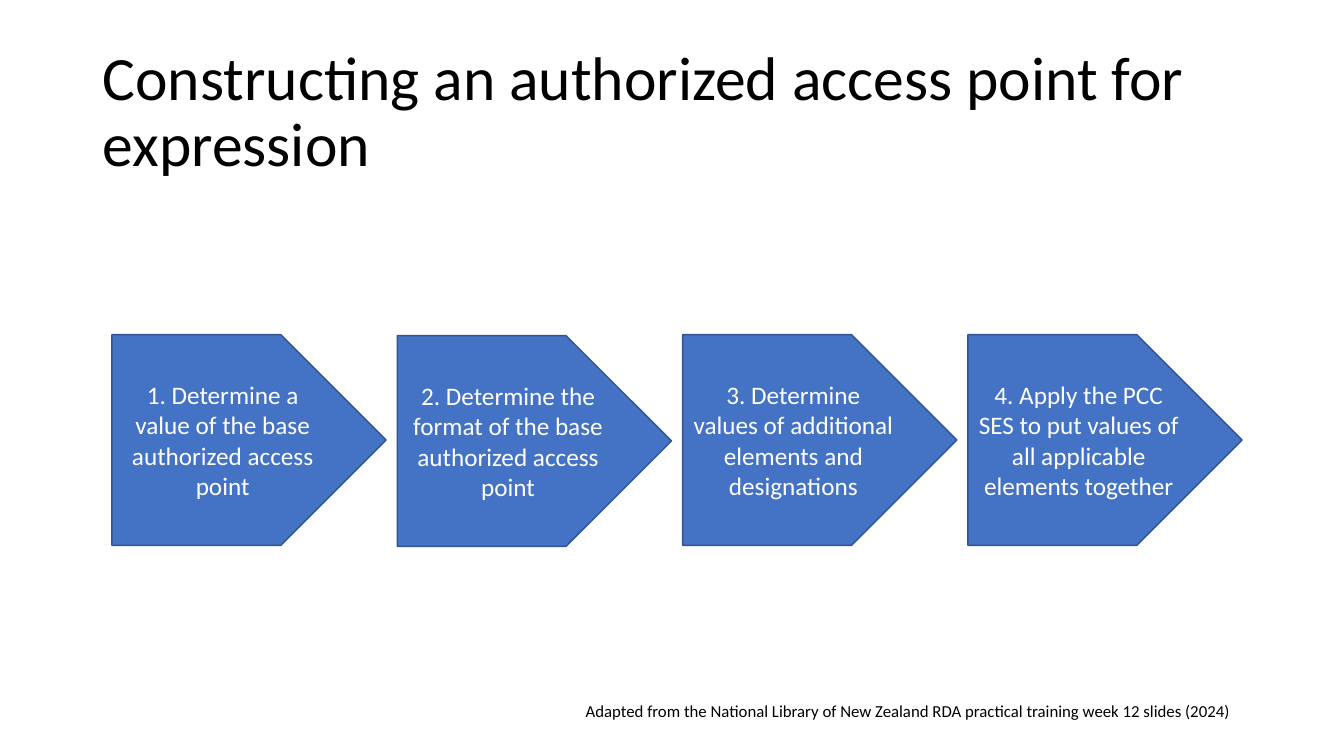
from pptx import Presentation
from pptx import util as u
from pptx.dml.color import RGBColor
from pptx.enum import shapes, text

PX = 9144  # EMU per px, 100 px to the inch

STEPS = [
    "1. Determine a value of the base authorized access point",
    "2. Determine the format of the base authorized access point",
    "3. Determine values of additional elements and designations",
    "4. Apply the PCC SES to put values of all applicable elements together",
]


def color(hex_string):
    return RGBColor.from_string(hex_string)


def write(shape, words, size, font="Calibri", fill="000000",
          align=text.PP_ALIGN.LEFT, anchor=text.MSO_ANCHOR.TOP, spacing=1.0):
    frame = shape.text_frame
    frame.word_wrap = True
    frame.vertical_anchor = anchor
    paragraph = frame.paragraphs[0]
    paragraph.alignment = align
    paragraph.line_spacing = spacing
    run = paragraph.add_run()
    run.text = words
    run.font.name = font
    run.font.size = u.Pt(size)
    run.font.color.rgb = color(fill)


class SlideBuilder:
    arrow_fill = "4472C4"
    arrow_line = "31538F"
    arrow_text = "FFFFFF"

    def __init__(self, slide):
        self.slide = slide

    def label(self, left, top, width, height, words, size, **style):
        box = self.slide.shapes.add_textbox(
            left * PX, top * PX, width * PX, height * PX)
        write(box, words, size, **style)

    def step_arrow(self, left, top, width, height, words):
        arrow = self.slide.shapes.add_shape(
            shapes.MSO_SHAPE.PENTAGON,
            left * PX, top * PX, width * PX, height * PX)
        arrow.shadow.inherit = False
        arrow.fill.solid()
        arrow.fill.fore_color.rgb = color(self.arrow_fill)
        arrow.line.color.rgb = color(self.arrow_line)
        arrow.line.width = u.Pt(1)
        write(arrow, words, 18, fill=self.arrow_text,
              align=text.PP_ALIGN.CENTER, anchor=text.MSO_ANCHOR.MIDDLE)


def main():
    presentation = Presentation()
    presentation.slide_width = 1333 * PX
    presentation.slide_height = 750 * PX
    builder = SlideBuilder(
        presentation.slides.add_slide(presentation.slide_layouts[6]))

    # Title
    builder.label(92, 40, 1150, 145,
                  "Constructing an authorized access point for expression", 44,
                  anchor=text.MSO_ANCHOR.MIDDLE, spacing=0.9)

    # Process steps, the second one a touch lower
    for index, words in enumerate(STEPS):
        top = 333 if index == 1 else 332
        builder.step_arrow(111 + 283 * index, top, 272, 209, words)

    # Source credit
    builder.label(571, 690, 671, 30,
                  "Adapted from the National Library of New Zealand RDA "
                  "practical training week 12 slides (2024)", 12)

    presentation.save("out.pptx")


if __name__ == "__main__":
    main()
